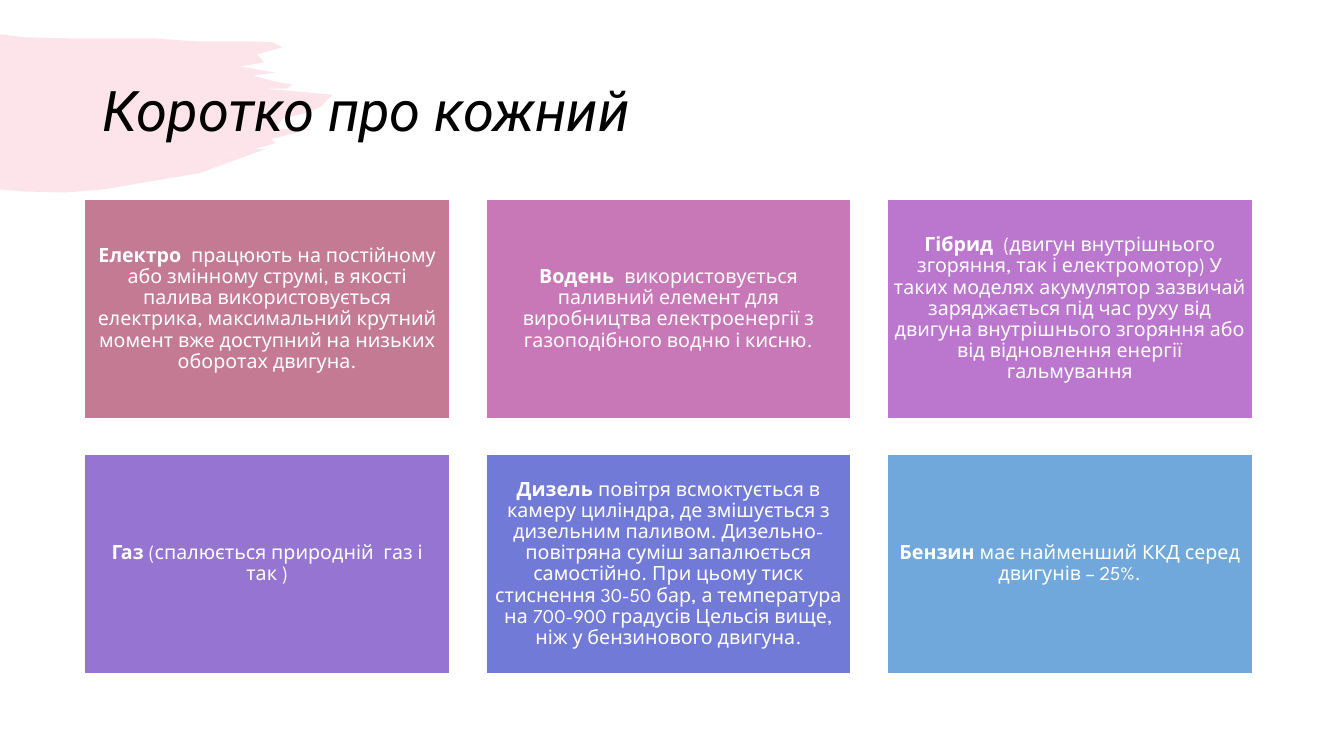
from dataclasses import dataclass

from lxml import etree
from pptx import Presentation
from pptx import util as u
from pptx.dml import color
from pptx.enum import shapes, text
from pptx.oxml import ns

COLORS: dict[str, str] = {
    "brush": "F07C98",
    "title": "000000",
    "white": "FFFFFF",
    "electric": "C47A93",
    "hydrogen": "C978B7",
    "hybrid": "BB76CE",
    "gas": "9574D2",
    "diesel": "727AD7",
    "petrol": "70A8DB",
}
BODY_FONT = "League Spartan"
TITLE_FONT = "Roboto"
COLUMNS = 3
CARD_LEFT, CARD_TOP = 0.84, 1.98
CARD_WIDTH, CARD_HEIGHT = 3.62, 2.17
STEP_X, STEP_Y = 3.98, 2.53

BRUSH: list[tuple[float, float]] = [
    (0, 0.34), (0.25, 0.37), (0.66, 0.38), (1.51, 0.38), (1.94, 0.41), (2.48, 0.41),
    (2.7, 0.42), (2.8, 0.47), (2.55, 0.54), (2.62, 0.62), (2.38, 0.66), (2.73, 0.72),
    (2.51, 0.75), (2.73, 0.81), (2.9, 0.84), (2.84, 0.88), (2.63, 0.88), (3.3, 0.94),
    (3.18, 1.06), (3.07, 1.11), (2.8, 1.18), (2.74, 1.28), (3.08, 1.28), (2.69, 1.38),
    (2.73, 1.42), (2.52, 1.48), (2.63, 1.48), (1.97, 1.72), (1.02, 1.88), (0.65, 1.91),
    (0.23, 1.9), (0, 1.88),
]


@dataclass(frozen=True)
class Card:
    fill: str
    name: str
    detail: str


CARDS: list[Card] = [
    Card("electric", "Електро", "  працюють на постійному або змінному струмі, в якості палива "
         "використовується електрика, максимальний крутний момент вже доступний "
         "на низьких оборотах двигуна."),
    Card("hydrogen", "Водень ", " використовується паливний елемент для виробництва "
         "електроенергії з газоподібного водню і кисню."),
    Card("hybrid", "Гібрид ", " (двигун внутрішнього згоряння, так і електромотор) У таких "
         "моделях акумулятор зазвичай заряджається під час руху від двигуна "
         "внутрішнього згоряння або від відновлення енергії гальмування"),
    Card("gas", "Газ", " (спалюється природній  газ і так )"),
    Card("diesel", "Дизель ", "повітря всмоктується в камеру циліндра, де змішується з "
         "дизельним паливом. Дизельно-повітряна суміш запалюється самостійно. "
         "При цьому тиск стиснення 30-50 бар, а температура на 700-900 градусів "
         "Цельсія вище, ніж у бензинового двигуна."),
    Card("petrol", "Бензин ", "має найменший ККД серед двигунів – 25%."),
]


def rgb(name: str) -> color.RGBColor:
    return color.RGBColor.from_string(COLORS[name])


def add_brush(s) -> None:
    points = [(u.Inches(x), u.Inches(y)) for x, y in BRUSH]
    builder = s.shapes.build_freeform(*points[0])
    builder.add_line_segments(points[1:], close=True)
    sp = builder.convert_to_shape()
    sp.shadow.inherit = False
    sp.fill.solid()
    sp.fill.fore_color.rgb = rgb("brush")
    sp.line.fill.background()
    fill = sp.element.spPr.find(ns.qn("a:solidFill"))
    etree.SubElement(fill[0], ns.qn("a:alpha"), val="20000")


def add_run(p, content: str, font: str, size: float, ink: str,
            bold: bool = False, italic: bool = False) -> None:
    r = p.add_run()
    r.text = content
    r.font.name = font
    r.font.size = u.Pt(size)
    r.font.bold = bold
    r.font.italic = italic
    r.font.color.rgb = rgb(ink)


def add_title(s) -> None:
    sp = s.shapes.add_textbox(u.Inches(0.92), u.Inches(0.4), u.Inches(11.5), u.Inches(1.45))
    tf = sp.text_frame
    tf.word_wrap = True
    tf.vertical_anchor = text.MSO_ANCHOR.MIDDLE
    p = tf.paragraphs[0]
    p.line_spacing = 0.9
    add_run(p, "Коротко про кожний", TITLE_FONT, 40, "title", italic=True)


def add_card(s, card: Card, index: int) -> None:
    row, column = divmod(index, COLUMNS)
    sp = s.shapes.add_shape(
        shapes.MSO_SHAPE.RECTANGLE,
        u.Inches(CARD_LEFT + column * STEP_X), u.Inches(CARD_TOP + row * STEP_Y),
        u.Inches(CARD_WIDTH), u.Inches(CARD_HEIGHT))
    sp.shadow.inherit = False
    sp.fill.solid()
    sp.fill.fore_color.rgb = rgb(card.fill)
    sp.line.color.rgb = rgb("white")
    sp.line.width = u.Pt(1)
    tf = sp.text_frame
    tf.word_wrap = True
    tf.vertical_anchor = text.MSO_ANCHOR.MIDDLE
    tf.margin_left = tf.margin_right = tf.margin_top = tf.margin_bottom = u.Inches(0.06)
    p = tf.paragraphs[0]
    p.alignment = text.PP_ALIGN.CENTER
    p.line_spacing = 0.9
    add_run(p, card.name, BODY_FONT, 14, "white", bold=True)
    add_run(p, card.detail, BODY_FONT, 14, "white")


def main() -> None:
    prs = Presentation()
    prs.slide_width, prs.slide_height = u.Inches(13.33), u.Inches(7.5)
    s = prs.slides.add_slide(prs.slide_layouts[6])
    add_brush(s)
    add_title(s)
    for index, card in enumerate(CARDS):
        add_card(s, card, index)
    prs.save("out.pptx")


if __name__ == "__main__":
    main()
